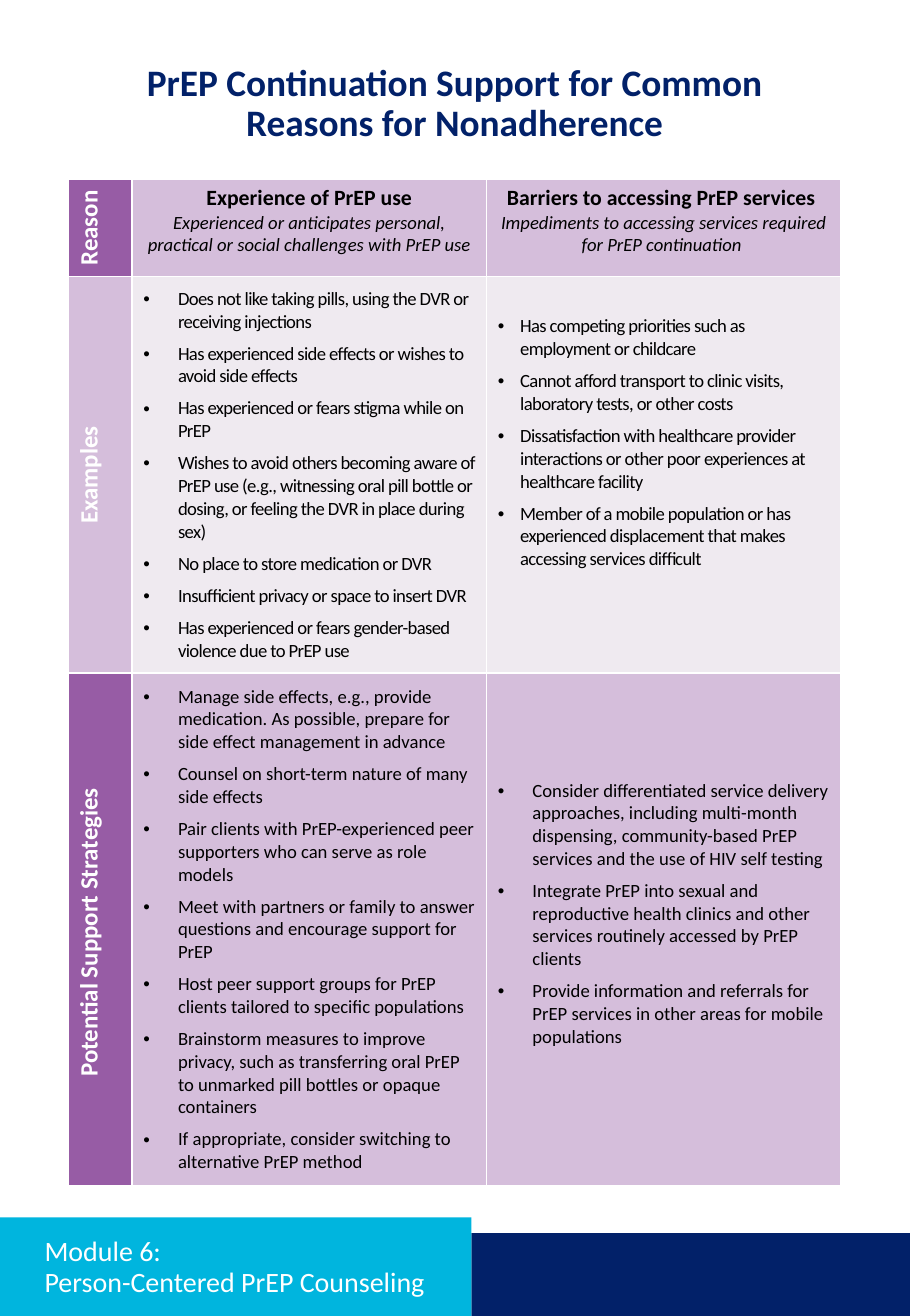
from lxml import etree
from pptx import Presentation
from pptx.dml.color import RGBColor
from pptx.enum.shapes import MSO_SHAPE
from pptx.enum.text import MSO_ANCHOR, PP_ALIGN
from pptx.oxml.ns import qn
from pptx.util import Inches, Pt

RECT = MSO_SHAPE.RECTANGLE
TOP, MIDDLE = MSO_ANCHOR.TOP, MSO_ANCHOR.MIDDLE
LEFT, CENTER = PP_ALIGN.LEFT, PP_ALIGN.CENTER
NAVY, CYAN, WHITE, BLACK = "022169", "00B5DE", "FFFFFF", "000000"
PURPLE, LILAC, PALE = "975CA5", "D5BEDB", "EFEAF0"

W, H = 8 + 1 / 8, 11.75
MARGIN = 0.61
BODY = 6.9
LABEL = 0.57
COLS = [LABEL] + [(BODY - LABEL) / 2] * 2
ROWS = [0.87, 3.54, 4.58]
SPLIT = 4.21


def rgb(code):
    return RGBColor.from_string(code)


def add_text(tf, text, size=12, color=BLACK, bold=False, italic=False,
             align=LEFT, spacing=None, indent=0, tracking=0):
    """Append one paragraph to tf; an indent makes it a bullet."""
    p = tf.paragraphs[0] if not tf.text else tf.add_paragraph()
    p.alignment = align
    if spacing:
        p.line_spacing = spacing
    if indent:
        p.space_after = Pt(6)
        pPr = p._p.get_or_add_pPr()
        pPr.set("marL", str(Inches(indent)))
        pPr.set("indent", str(-Inches(indent)))
        etree.SubElement(pPr, qn("a:buFont")).set("typeface", "Arial")
        etree.SubElement(pPr, qn("a:buChar")).set("char", "•")
    for i, line in enumerate(text.split("\n")):
        if i:
            p.add_line_break()
        r = p.add_run()
        r.text = line
        r.font.name, r.font.size = "Calibri", Pt(size)
        r.font.bold, r.font.italic = bold, italic
        r.font.color.rgb = rgb(color)
        if tracking:
            r._r.get_or_add_rPr().set("spc", str(int(tracking * 100)))


prs = Presentation()
prs.slide_width, prs.slide_height = Inches(W), Inches(H)
slide = prs.slides.add_slide(prs.slide_layouts[6])

# Footer bands
for left, top, width, color in [(SPLIT, 11.01, W - SPLIT, NAVY),
                                (0, 10.87, SPLIT, CYAN)]:
    sp = slide.shapes.add_shape(RECT, Inches(left), Inches(top),
                                Inches(width), Inches(H - top))
    sp.shadow.inherit = False
    sp.fill.solid()
    sp.fill.fore_color.rgb = rgb(color)
    sp.line.fill.background()

# Slide title and module name
headings = [
    ((MARGIN, 0.52, BODY, 0.81), TOP, 0.3,
     "PrEP Continuation Support for Common Reasons for Nonadherence",
     dict(size=24, color=NAVY, bold=True, align=CENTER)),
    ((0.3, 11.07, 3.86, 0.5), MIDDLE, 0.1,
     "Module 6: \nPerson-Centered PrEP Counseling",
     dict(size=18, color=WHITE)),
]
for box, anchor, inset, text, style in headings:
    tf = slide.shapes.add_textbox(*map(Inches, box)).text_frame
    tf.word_wrap = True
    tf.vertical_anchor = anchor
    tf.margin_left = tf.margin_right = Inches(inset)
    add_text(tf, text, spacing=0.9, **style)

# Table of reasons, examples and strategies
table = slide.shapes.add_table(
    len(ROWS), len(COLS), Inches(MARGIN), Inches(1.6),
    Inches(BODY), Inches(sum(ROWS))).table
table.first_row = table.horz_banding = False
for column, width in zip(table.columns, COLS):
    column.width = Inches(width)
for row, height in zip(table.rows, ROWS):
    row.height = Inches(height)

reasons = [
    ("Experience of PrEP use",
     "Experienced or anticipates personal, practical or social challenges with PrEP use"),
    ("Barriers to accessing PrEP services ",
     "Impediments to accessing services required for PrEP continuation "),
]
for c, (reason, meaning) in enumerate(reasons, 1):
    tf = table.cell(0, c).text_frame
    add_text(tf, reason, size=14, bold=True, align=CENTER)
    add_text(tf, meaning, italic=True, align=CENTER)

# (row, column): indent, tracking, bottom inset, bullets
bullets = {
    (1, 1): (0.31, -0.4, 0.05, [
        "Does not like taking pills, using the DVR or receiving injections",
        "Has experienced side effects or wishes to avoid side effects",
        "Has experienced or fears stigma while on PrEP",
        "Wishes to avoid others becoming aware of PrEP use (e.g., witnessing oral "
        "pill bottle or dosing, or feeling the DVR in place during sex)",
        "No place to store medication or DVR",
        "Insufficient privacy or space to insert DVR",
        "Has experienced or fears gender-based violence due to PrEP use"]),
    (1, 2): (0.2, -0.4, 0.62, [
        "Has competing priorities such as employment or childcare",
        "Cannot afford transport to clinic visits, laboratory tests, or other costs",
        "Dissatisfaction with healthcare provider interactions or other poor "
        "experiences at healthcare facility",
        "Member of a mobile population or has experienced displacement that makes "
        "accessing services difficult"]),
    (2, 1): (0.31, 0, 0.05, [
        "Manage side effects, e.g., provide medication. As possible, prepare for "
        "side effect management in advance",
        "Counsel on short-term nature of many side effects",
        "Pair clients with PrEP-experienced peer supporters who can serve as role models",
        "Meet with partners or family to answer questions and encourage support for PrEP",
        "Host peer support groups for PrEP clients tailored to specific populations",
        "Brainstorm measures to improve privacy, such as transferring oral PrEP to "
        "unmarked pill bottles or opaque containers",
        "If appropriate, consider switching to alternative PrEP method"]),
    (2, 2): (0.31, 0, 0.33, [
        "Consider differentiated service delivery approaches, including multi-month "
        "dispensing, community-based PrEP services and the use of HIV self testing",
        "Integrate PrEP into sexual and reproductive health clinics and other "
        "services routinely accessed by PrEP clients",
        "Provide information and referrals for PrEP services in other areas for "
        "mobile populations"]),
}
for (row, col), (indent, tracking, bottom, items) in bullets.items():
    cell = table.cell(row, col)
    cell.vertical_anchor = MIDDLE
    cell.margin_bottom = Inches(bottom)
    for item in items:
        add_text(cell.text_frame, item, indent=indent, tracking=tracking)

row_styles = [("Reason ", PURPLE, LILAC), ("Examples", LILAC, PALE),
              ("Potential Support Strategies ", PURPLE, LILAC)]
for i, (label, label_fill, body_fill) in enumerate(row_styles):
    head = table.cell(i, 0)
    head.vertical_anchor = MIDDLE
    add_text(head.text_frame, label, size=16, color=WHITE, bold=True, align=CENTER)
    head._tc.get_or_add_tcPr().set("vert", "vert270")
    for j in range(len(COLS)):
        cell = table.cell(i, j)
        tcPr = cell._tc.get_or_add_tcPr()
        for side in ("a:lnL", "a:lnR", "a:lnT", "a:lnB"):
            ln = etree.SubElement(tcPr, qn(side), w=str(Pt(1)))
            fill = etree.SubElement(ln, qn("a:solidFill"))
            etree.SubElement(fill, qn("a:srgbClr"), val=WHITE)
        cell.fill.solid()
        cell.fill.fore_color.rgb = rgb(body_fill if j else label_fill)

prs.save("out.pptx")
